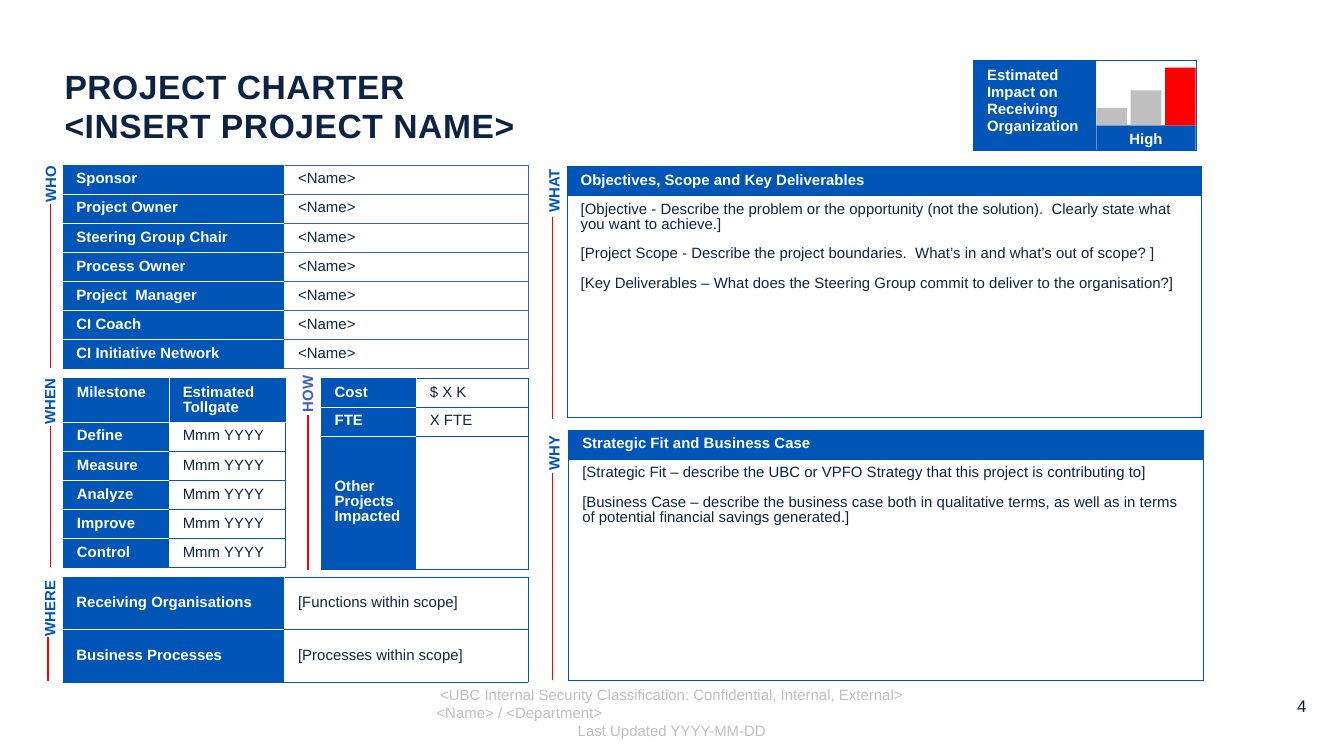
import pptx
import pptx.dml.color
import pptx.enum.shapes
import pptx.enum.text
import pptx.oxml
import pptx.oxml.ns
import pptx.util
from pptx.util import Cm

COLORS = {
    "blue": "0055B7", "violet": "3E5FC2", "navy": "0C2344", "ink": "002040",
    "red": "FF0000", "gray": "BFBFBF", "white": "FFFFFF",
}
ALIGN = pptx.enum.text.PP_ALIGN
ANCHOR = pptx.enum.text.MSO_ANCHOR
RECTANGLE = pptx.enum.shapes.MSO_SHAPE.RECTANGLE
STRAIGHT = pptx.enum.shapes.MSO_CONNECTOR.STRAIGHT


def write(frame, texts, color, size=8, bold=False, align=ALIGN.LEFT, leading=None, gap=0):
    for index, text in enumerate(texts):
        para = frame.paragraphs[0] if index == 0 else frame.add_paragraph()
        para.alignment = align
        if leading:
            para.line_spacing = pptx.util.Pt(leading)
        if index and gap:
            para.space_before = pptx.util.Pt(gap)
        for number, piece in enumerate(text.split("\n")):
            if number:
                para.add_line_break()
            span = para.add_run()
            span.text = piece
            span.font.name = "Arial"
            span.font.size = pptx.util.Pt(size)
            span.font.bold = bold
            span.font.color.rgb = pptx.dml.color.RGBColor.from_string(COLORS[color])


def add_border(cell, side, color):
    line = pptx.oxml.parse_xml(
        f'<a:ln{side} {pptx.oxml.ns.nsdecls("a")} w="6350"><a:solidFill>'
        f'<a:srgbClr val="{COLORS[color]}"/></a:solidFill></a:ln{side}>')
    cell._tc.get_or_add_tcPr().append(line)


deck = pptx.Presentation()
deck.slide_width, deck.slide_height = Cm(25.4), Cm(14.29)
page = deck.slides.add_slide(deck.slide_layouts[6])

roles = ["Sponsor", "Project Owner", "Steering Group Chair", "Process Owner",
         "Project  Manager", "CI Coach", "CI Initiative Network"]
phases = ["Define", "Measure", "Analyze", "Improve", "Control"]
objectives = [
    "[Objective - Describe the problem or the opportunity (not the solution).  Clearly state what you want to achieve.]",
    "[Project Scope - Describe the project boundaries.  What’s in and what’s out of scope? ]",
    "[Key Deliverables – What does the Steering Group commit to deliver to the organisation?]",
]
business_case = [
    "[Strategic Fit – describe the UBC or VPFO Strategy that this project is contributing to]",
    "[Business Case – describe the business case both in qualitative terms, as well as in terms of potential financial savings generated.]",
]

tables = [
    dict(at=(18.4, 1.14), cols=[2.31, 1.9], rows=[1.71], head_column=True, top_rows=1,
         seam="blue", leading=None,
         cells=[["Estimated Impact on Receiving Organization", ""]]),
    dict(at=(1.2, 7.16), cols=[2, 2.2], rows=[0.81] + [0.55] * 5, head_row=True,
         head_column=True, top_rows=1,
         cells=[["Milestone", "Estimated\nTollgate"]] + [[phase, "Mmm YYYY"] for phase in phases]),
    dict(at=(1.19, 3.12), cols=[4.19, 4.6], rows=[0.55] * 7, head_column=True, edge="violet",
         cells=[[role, "<Name>"] for role in roles]),
    dict(at=(6.07, 7.16), cols=[1.8, 2.11], rows=[0.54, 0.54, 2.52], head_column=True,
         cells=[["Cost", "$ X K"], ["FTE", "X FTE"], ["Other Projects Impacted", ""]]),
    dict(at=(10.72, 3.15), cols=[11.99], rows=[0.55, 4.19], head_row=True, top_rows=2,
         seam="blue", cells=[["Objectives, Scope and Key Deliverables"], [objectives]]),
    dict(at=(10.75, 8.13), cols=[11.99], rows=[0.55, 4.19], head_row=True, top_rows=2,
         seam="blue", cells=[["Strategic Fit and Business Case"], [business_case]]),
    dict(at=(1.19, 10.91), cols=[4.19, 4.6], rows=[0.99, 0.99], head_column=True,
         cells=[["Receiving Organisations", "[Functions within scope]"],
                ["Business Processes", "[Processes within scope]"]]),
]

for item in tables:
    left, top = item["at"]
    cols, rows = item["cols"], item["rows"]
    table = page.shapes.add_table(
        len(rows), len(cols), Cm(left), Cm(top), Cm(sum(cols)), Cm(sum(rows))).table
    table.horz_banding = False
    table.first_row = item.get("head_row", False)
    table.first_col = item.get("head_column", False)
    for column, width in zip(table.columns, cols):
        column.width = Cm(width)
    heads = {(r, c) for r in range(len(rows)) for c in range(len(cols))
             if table.first_row and r == 0 or table.first_col and c == 0}
    for r, height in enumerate(rows):
        table.rows[r].height = Cm(height)
        for c in range(len(cols)):
            cell = table.cell(r, c)
            is_head = (r, c) in heads
            edge = "blue" if is_head else item.get("edge", "blue")
            neighbours = {"L": (r, c - 1), "R": (r, c + 1), "T": (r - 1, c), "B": (r + 1, c)}
            for side, (row, col) in neighbours.items():
                inside = 0 <= row < len(rows) and 0 <= col < len(cols)
                touches_head = is_head or (row, col) in heads
                add_border(cell, side, item.get("seam", "white") if inside and touches_head else edge)
            cell.fill.solid()
            cell.fill.fore_color.rgb = pptx.dml.color.RGBColor.from_string(
                COLORS["blue" if is_head else "white"])
            cell.vertical_anchor = ANCHOR.TOP if r < item.get("top_rows", 0) else ANCHOR.MIDDLE
            content = item["cells"][r][c]
            if content:
                write(cell.text_frame, [content] if isinstance(content, str) else content,
                      "white" if is_head else "navy", bold=is_head,
                      leading=item.get("leading", 8), gap=8)

title = page.shapes.add_textbox(Cm(1.22), Cm(1.14), Cm(16.5), Cm(1.73)).text_frame
title.word_wrap = True
title.vertical_anchor = ANCHOR.MIDDLE
title.margin_left = title.margin_right = title.margin_top = title.margin_bottom = 0
write(title, ["PROJECT CHARTER", "<INSERT PROJECT NAME>"], "navy", 18, True, leading=21)
for para in title.paragraphs:
    for span in para.runs:
        span._r.get_or_add_rPr().set("spc", "30")

footer = page.shapes.add_textbox(Cm(7.7), Cm(12.97), Cm(10), Cm(0.99)).text_frame
footer.word_wrap = True
footer.vertical_anchor = ANCHOR.MIDDLE
write(footer, ["<UBC Internal Security Classification: Confidential, Internal, External>",
               "<Name> / <Department>", "Last Updated YYYY-MM-DD"], "gray", align=ALIGN.CENTER)
department = footer.paragraphs[1]
department.alignment = ALIGN.LEFT
department._p.get_or_add_pPr().set("marL", str(Cm(0.3)))

number = page.shapes.add_textbox(Cm(23.85), Cm(13.16), Cm(0.84), Cm(0.53)).text_frame
number.word_wrap = True
number.margin_left = number.margin_right = number.margin_top = number.margin_bottom = 0
write(number, ["4"], "ink", 9, align=ALIGN.RIGHT)

sections = [
    ("WHO", "blue", (0.34, 3.18, 1.22), (0.95, 3.86, 6.96)),
    ("WHEN", "blue", (0.25, 7.29, 1.37), (0.95, 8.05, 10.72)),
    ("WHAT", "blue", (9.78, 3.3, 1.37), (10.44, 4.11, 7.92)),
    ("WHY", "blue", (9.88, 8.26, 1.17), (10.44, 8.94, 12.85)),
    ("HOW", "violet", (5.21, 7.14, 1.19), (5.82, 7.85, 10.77)),
    ("WHERE", "blue", (0.15, 11.2, 1.57), (0.91, 12.04, 12.88)),
]
for name, color, (left, top, width), (x, start, end) in sections:
    box = page.shapes.add_textbox(Cm(left), Cm(top), Cm(width), Cm(0.61))
    box.rotation = 270
    box.text_frame.word_wrap = False
    box.text_frame.margin_left = box.text_frame.margin_right = 0
    box.text_frame.vertical_anchor = ANCHOR.MIDDLE
    write(box.text_frame, [name], color, bold=True, align=ALIGN.CENTER)
    rule = page.shapes.add_connector(STRAIGHT, Cm(x), Cm(start), Cm(x), Cm(end))
    rule.line.color.rgb = pptx.dml.color.RGBColor.from_string(COLORS["red"])
    rule.line.width = pptx.util.Pt(0.75)
    rule._element.spPr.append(
        pptx.oxml.parse_xml(f'<a:effectLst {pptx.oxml.ns.nsdecls("a")}/>'))

base = 2.37
blocks = [(20.72, base, 1.88, 0.48, "blue", "High")]
for index, (height, color) in enumerate([(0.33, "gray"), (0.66, "gray"), (1.09, "red")]):
    blocks.append((20.72 + 0.65 * index, base - height, 0.58, height, color, ""))
for left, top, width, height, color, text in blocks:
    block = page.shapes.add_shape(RECTANGLE, Cm(left), Cm(top), Cm(width), Cm(height))
    block.shadow.inherit = False
    block.fill.solid()
    block.fill.fore_color.rgb = pptx.dml.color.RGBColor.from_string(COLORS[color])
    block.line.fill.background()
    if text:
        block.text_frame.margin_top = block.text_frame.margin_bottom = 0
        block.text_frame.vertical_anchor = ANCHOR.MIDDLE
        write(block.text_frame, [text], "white", bold=True, align=ALIGN.CENTER)

deck.save("out.pptx")
